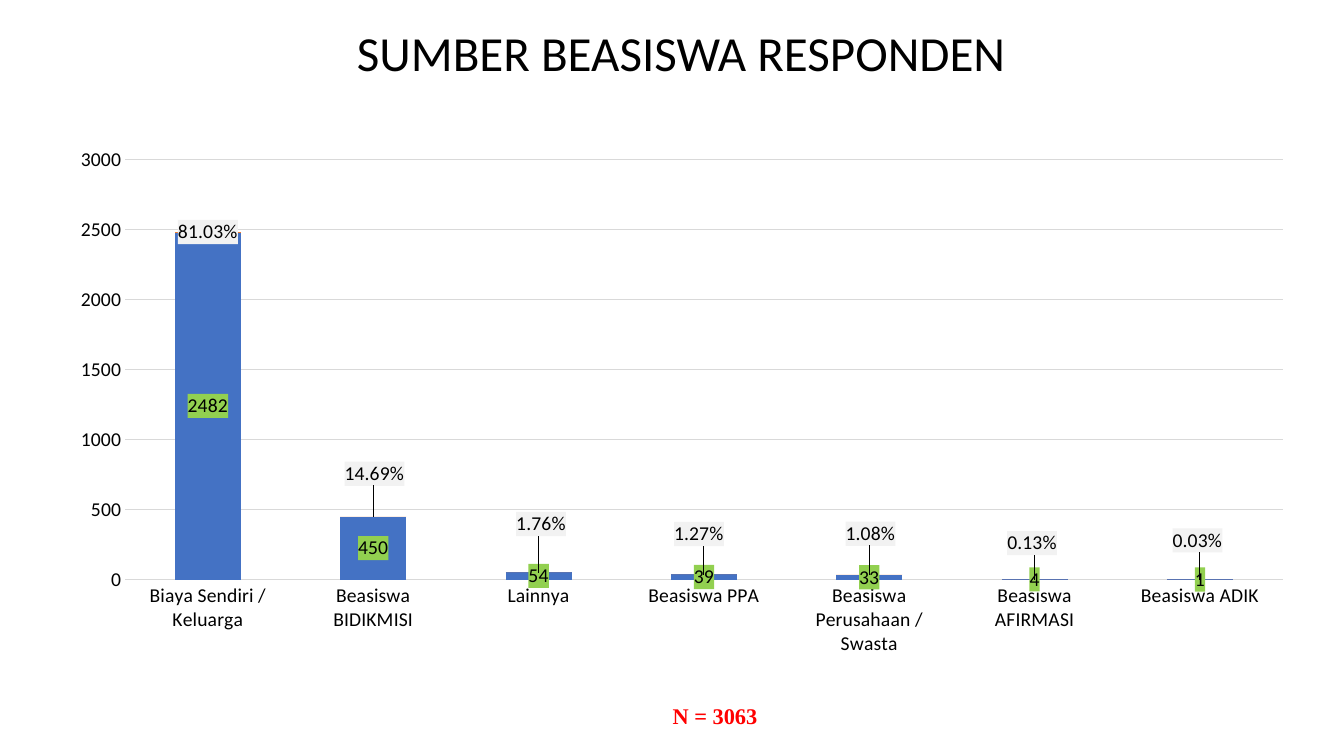
from lxml import etree
from pptx import Presentation
from pptx.chart.data import CategoryChartData
from pptx.dml.color import RGBColor
from pptx.enum.chart import XL_CHART_TYPE as ChartType, XL_TICK_MARK as TickMark
from pptx.enum.text import MSO_ANCHOR as Anchor, PP_ALIGN as Align
from pptx.oxml import parse_xml
from pptx.oxml.ns import nsdecls, qn
from pptx.util import Inches, Pt

BLACK = RGBColor(0x00, 0x00, 0x00)
RED = RGBColor(0xFF, 0x00, 0x00)
BLUE = RGBColor(0x44, 0x72, 0xC4)
ORANGE = RGBColor(0xED, 0x7D, 0x31)
GREEN = RGBColor(0x92, 0xD0, 0x50)
PALE_GREY = RGBColor(0xF2, 0xF2, 0xF2)
GRID_GREY = RGBColor(0xD9, 0xD9, 0xD9)

# source, respondents, share, label shift (x, y) as shares of the chart
SOURCES = [
    ("Biaya Sendiri / Keluarga", 2482, 0.8103, None),
    ("Beasiswa BIDIKMISI", 450, 0.1469, (0.001, -0.081)),
    ("Lainnya", 54, 0.0176, (0.002, -0.091)),
    ("Beasiswa PPA", 39, 0.0127, (-0.004, -0.076)),
    ("Beasiswa Perusahaan / Swasta", 33, 0.0108, (0.001, -0.078)),
    ("Beasiswa AFIRMASI", 4, 0.0013, (-0.002, -0.068)),
    ("Beasiswa ADIK", 1, 0.0003, (-0.002, -0.074)),
]


def style_font(font, size, color=BLACK, name="Calibri", bold=False):
    font.name, font.size, font.bold = name, Pt(size), bold
    font.color.rgb = color


def manual_layout(**settings):
    """Return a c:layout element holding the given manual settings in order."""
    layout = parse_xml(f"<c:layout {nsdecls('c')}><c:manualLayout/></c:layout>")
    for tag, value in settings.items():
        etree.SubElement(layout[0], qn(f"c:{tag}")).set("val", str(value))
    return layout


prs = Presentation()
prs.slide_width, prs.slide_height = Inches(13.33), Inches(7.5)
W, H = prs.slide_width, prs.slide_height
left, content_width = int(W * 0.041), int(W * 0.932)

slide = prs.slides.add_slide(prs.slide_layouts[5])

# Title
title = slide.shapes.title
title.left, title.top = left, int(H * 0.013)
title.width, title.height = content_width, int(H * 0.12)
title.text_frame.vertical_anchor = Anchor.MIDDLE
heading = title.text_frame.paragraphs[0]
heading.alignment, heading.line_spacing = Align.CENTER, 0.9
heading_run = heading.add_run()
heading_run.text = "SUMBER BEASISWA RESPONDEN"
style_font(heading_run.font, 35)

# Total of respondents
total = slide.shapes.add_table(
    1, 1, int(W * 0.482), int(H * 0.925), int(W * 0.1), int(H * 0.045)
).table.cell(0, 0)
total.fill.background()
total_line = total.text_frame.paragraphs[0]
total_line.alignment = Align.CENTER
total_run = total_line.add_run()
total_run.text = "N = 3063"
style_font(total_run.font, 16, RED, "Times New Roman", True)

# Chart
names, counts, shares, shifts = zip(*SOURCES)
data = CategoryChartData()
data.categories = names
data.add_series("Series 1", counts)
data.add_series("Series 2", shares)
chart = slide.shapes.add_chart(
    ChartType.COLUMN_STACKED, left, int(H * 0.181), content_width, int(H * 0.7), data
).chart
chart.has_legend = chart.has_title = False
style_font(chart.font, 14)
plot = chart.plots[0]
plot.gap_width, plot.overlap, plot.vary_by_categories = 150, 100, False

plot_area = plot._element.getparent()
for auto_layout in plot_area.findall(qn("c:layout")):
    plot_area.remove(auto_layout)
plot_area.insert(0, manual_layout(
    layoutTarget="inner", xMode="edge", yMode="edge", x=0.056, y=0.043, w=0.924, h=0.794))

for axis in (chart.category_axis, chart.value_axis):
    axis.major_tick_mark = axis.minor_tick_mark = TickMark.NONE
    style_font(axis.tick_labels.font, 14)
source_axis, count_axis = chart.category_axis, chart.value_axis
count_axis.minimum_scale, count_axis.maximum_scale, count_axis.major_unit = 0, 3000, 500
count_axis.format.line.fill.background()
for line in (source_axis.format.line, count_axis.major_gridlines.format.line):
    line.color.rgb, line.width = GRID_GREY, Pt(0.75)

looks = [(BLUE, GREEN, "General"), (ORANGE, PALE_GREY, "0.00%")]
for series, (bar_color, label_color, number_format) in zip(plot.series, looks):
    series.format.fill.solid()
    series.format.fill.fore_color.rgb = bar_color
    labels = series.data_labels
    labels.show_value = True
    labels.number_format, labels.number_format_is_linked = number_format, False
    style_font(labels.font, 14)

    if bar_color == ORANGE:
        for index, shift in enumerate(shifts):
            if shift is None:
                continue
            style_font(series.points[index].data_label.font, 14)
            label = series._element.xpath(f"c:dLbls/c:dLbl[c:idx/@val='{index}']")[0]
            label.insert(1, manual_layout(x=shift[0], y=shift[1]))
            label.insert(2, parse_xml(
                f'<c:numFmt {nsdecls("c")} formatCode="{number_format}" sourceLinked="0"/>'))

    for number in series._element.xpath("c:dLbls//c:numFmt"):
        for old_look in number.getparent().findall(qn("c:spPr")):
            number.getparent().remove(old_look)
        number.addnext(parse_xml(
            f'<c:spPr {nsdecls("c", "a")}><a:solidFill><a:srgbClr val="{label_color}"/>'
            "</a:solidFill></c:spPr>"))

prs.save("out.pptx")
